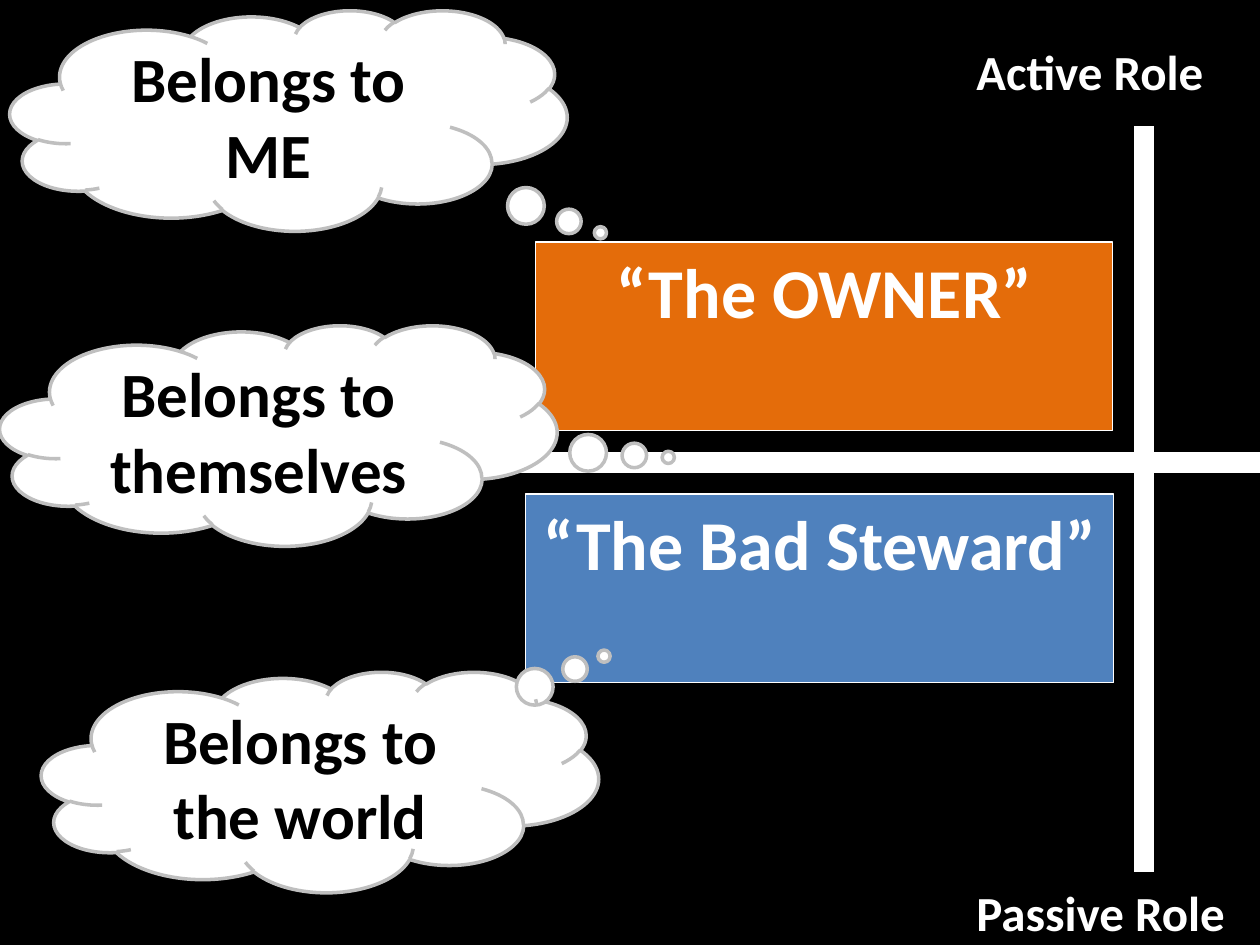
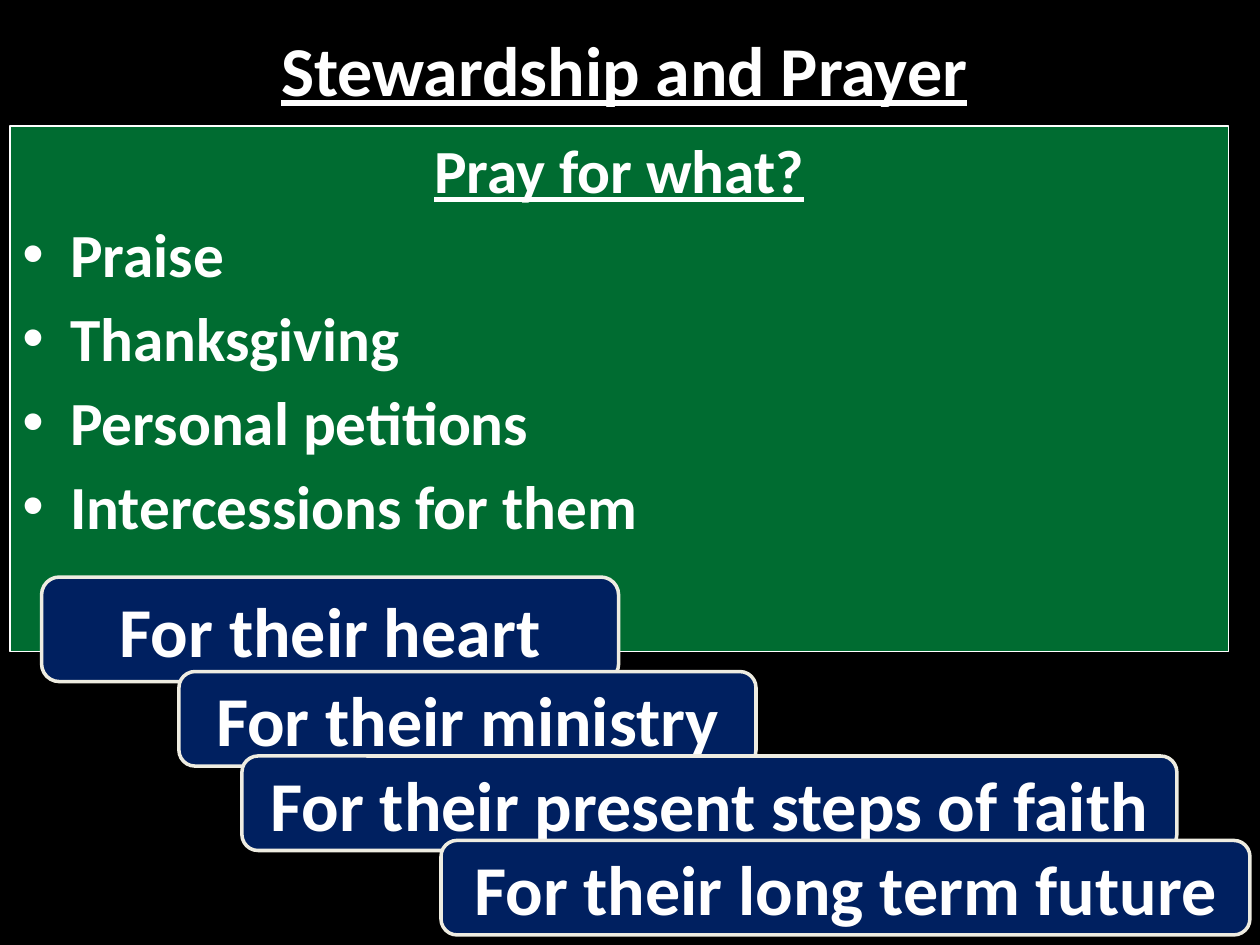
from lxml.etree import SubElement
from pptx import Presentation
from pptx.dml.color import RGBColor
from pptx.enum.shapes import MSO_CONNECTOR, MSO_SHAPE
from pptx.enum.text import MSO_ANCHOR, MSO_AUTO_SIZE, PP_ALIGN
from pptx.oxml.ns import qn
from pptx.util import Inches, Pt

FONT = "Calibri"
BLACK, WHITE, GREY, CREAM = "000000", "FFFFFF", "BFBFBF", "EEECE1"
ORANGE, BLUE, GREEN, NAVY = "E46C0A", "4F81BD", "006C31", "002060"


def paint(color_holder, color):
    """Give a solid fill or a font the colour of a hex string."""
    target = color_holder.fore_color if hasattr(color_holder, "fore_color") else color_holder.color
    target.rgb = RGBColor.from_string(color)


def place(shape, box):
    """Move a shape to a box of left, top, width and height in inches."""
    shape.left, shape.top, shape.width, shape.height = map(Inches, box)


def format_paragraph(paragraph, size, color=WHITE, align=PP_ALIGN.CENTER, underline=False, before=0):
    """Apply the shared bold lettering to a paragraph."""
    paragraph.alignment = align
    paragraph.space_before = Pt(before)
    for run in paragraph.runs:
        run.font.name = FONT
        run.font.size = Pt(size)
        run.font.bold = True
        run.font.underline = underline
        paint(run.font, color)


def add_bullet(paragraph):
    """Give a paragraph a round bullet with a hanging indent."""
    properties = paragraph._p.get_or_add_pPr()
    properties.set("marL", str(Inches(0.38)))
    properties.set("indent", str(-Inches(0.38)))
    SubElement(properties, qn("a:buFont"), typeface="Arial")
    SubElement(properties, qn("a:buChar"), char="•")


def add_panel(slide, kind, box, fill, line, line_width, anchor, adjustments=()):
    """Add a filled, outlined shape and return it."""
    shape = slide.shapes.add_shape(kind, *map(Inches, box))
    shape.shadow.inherit = False
    for index, value in enumerate(adjustments):
        shape.adjustments[index] = value
    shape.fill.solid()
    paint(shape.fill, fill)
    shape.line.fill.solid()
    paint(shape.line.fill, line)
    shape.line.width = Pt(line_width)
    shape.text_frame.word_wrap = True
    shape.text_frame.vertical_anchor = anchor
    return shape


def add_axis(slide, start, end):
    """Add a thick white axis between two points."""
    axis = slide.shapes.add_connector(MSO_CONNECTOR.STRAIGHT, *map(Inches, start + end))
    axis.line.fill.solid()
    paint(axis.line.fill, WHITE)
    axis.line.width = Pt(11.75)
    SubElement(axis._element.spPr, qn("a:effectLst"))


def add_axis_label(slide, text, left, top):
    """Add the name at one end of the role axis."""
    label = slide.shapes.add_textbox(*map(Inches, (left, top, 2, 0.42)))
    frame = label.text_frame
    frame.word_wrap = True
    frame.margin_left = frame.margin_right = frame.margin_top = frame.margin_bottom = 0
    frame.text = text
    format_paragraph(frame.paragraphs[0], 28, align=PP_ALIGN.LEFT, before=5)


def add_role(slide, text, box, fill):
    """Add the rectangle that names a role."""
    role = add_panel(slide, MSO_SHAPE.RECTANGLE, box, fill, WHITE, 0.75, MSO_ANCHOR.TOP)
    role.text_frame.text = text
    format_paragraph(role.text_frame.paragraphs[0], 40, before=7)


def add_thought(slide, text, left, top, tail):
    """Add a thought cloud whose bubbles lead to the tail."""
    cloud = add_panel(slide, MSO_SHAPE.CLOUD_CALLOUT, (left, top, 4.42, 1.75),
                      WHITE, GREY, 2, MSO_ANCHOR.MIDDLE, tail)
    cloud.text_frame.text = text
    format_paragraph(cloud.text_frame.paragraphs[0], 36, BLACK)


def add_prayer_list(slide, box, heading, items):
    """Add the green panel with a heading and bulleted items."""
    panel = add_panel(slide, MSO_SHAPE.RECTANGLE, box, GREEN, WHITE, 0.75, MSO_ANCHOR.TOP)
    frame = panel.text_frame
    frame.text = "\n".join([heading] + items)
    format_paragraph(frame.paragraphs[0], 35, underline=True, before=6)
    for paragraph in frame.paragraphs[1:]:
        format_paragraph(paragraph, 35, align=PP_ALIGN.LEFT, before=6)
        add_bullet(paragraph)


def add_intercession(slide, text, box):
    """Add one navy step of the intercession cascade."""
    step = add_panel(slide, MSO_SHAPE.ROUNDED_RECTANGULAR_CALLOUT, box, NAVY, CREAM, 2,
                     MSO_ANCHOR.MIDDLE, (-0.22, 0.5, 0.17))
    step.text_frame.text = text
    format_paragraph(step.text_frame.paragraphs[0], 40)


def set_title(slide, text, box):
    """Place and format the title placeholder."""
    title = slide.shapes.title
    place(title, box)
    frame = title.text_frame
    frame.text = text
    frame.auto_size = MSO_AUTO_SIZE.NONE
    frame.vertical_anchor = MSO_ANCHOR.MIDDLE
    format_paragraph(frame.paragraphs[0], 40, underline=True)


def build_roles_slide(presentation):
    """Build the role axes with their owners and thoughts."""
    slide = presentation.slides.add_slide(presentation.slide_layouts[6])
    add_axis(slide, (3.33, 3.67), (10, 3.67))
    add_axis(slide, (9.08, 1), (9.08, 6.92))
    add_axis_label(slide, "Active Role", 7.75, 0.33)
    add_axis_label(slide, "Passive Role", 7.75, 7)
    add_role(slide, "“The Bad Steward”", (4.17, 3.92, 4.67, 1.5), BLUE)
    add_thought(slide, "Belongs to the world", 0.33, 5.33, (0.51, -0.57))
    add_thought(slide, "Belongs to ME", 0.08, 0.08, (0.56, 0.51))
    add_role(slide, "“The OWNER”", (4.25, 1.92, 4.58, 1.5), ORANGE)
    add_thought(slide, "Belongs to themselves", 0, 2.58, (0.7, 0.1))


def build_prayer_slide(presentation):
    """Build the prayer list and its cascade of intercessions."""
    slide = presentation.slides.add_slide(presentation.slide_layouts[5])
    set_title(slide, "Stewardship and Prayer", (0.08, 0.08, 9.75, 0.92))
    add_prayer_list(slide, (0.08, 1, 9.67, 4.17), "Pray for what?",
                    ["Praise", "Thanksgiving", "Personal petitions", "Intercessions for them"])
    intercessions = [
        ("For their heart", (0.33, 4.58, 4.58, 0.83)),
        ("For their ministry", (1.42, 5.33, 4.58, 0.75)),
        ("For their present steps of faith", (1.92, 6, 7.42, 0.75)),
        ("For their long term future", (3.5, 6.67, 6.42, 0.75)),
    ]
    for text, box in intercessions:
        add_intercession(slide, text, box)


def main():
    """Build and save the presentation."""
    presentation = Presentation()
    presentation.slide_width, presentation.slide_height = Inches(10), Inches(7.5)
    background = presentation.slide_master.background.fill
    background.solid()
    paint(background, BLACK)
    build_roles_slide(presentation)
    build_prayer_slide(presentation)
    presentation.save("out.pptx")


if __name__ == "__main__":
    main()
